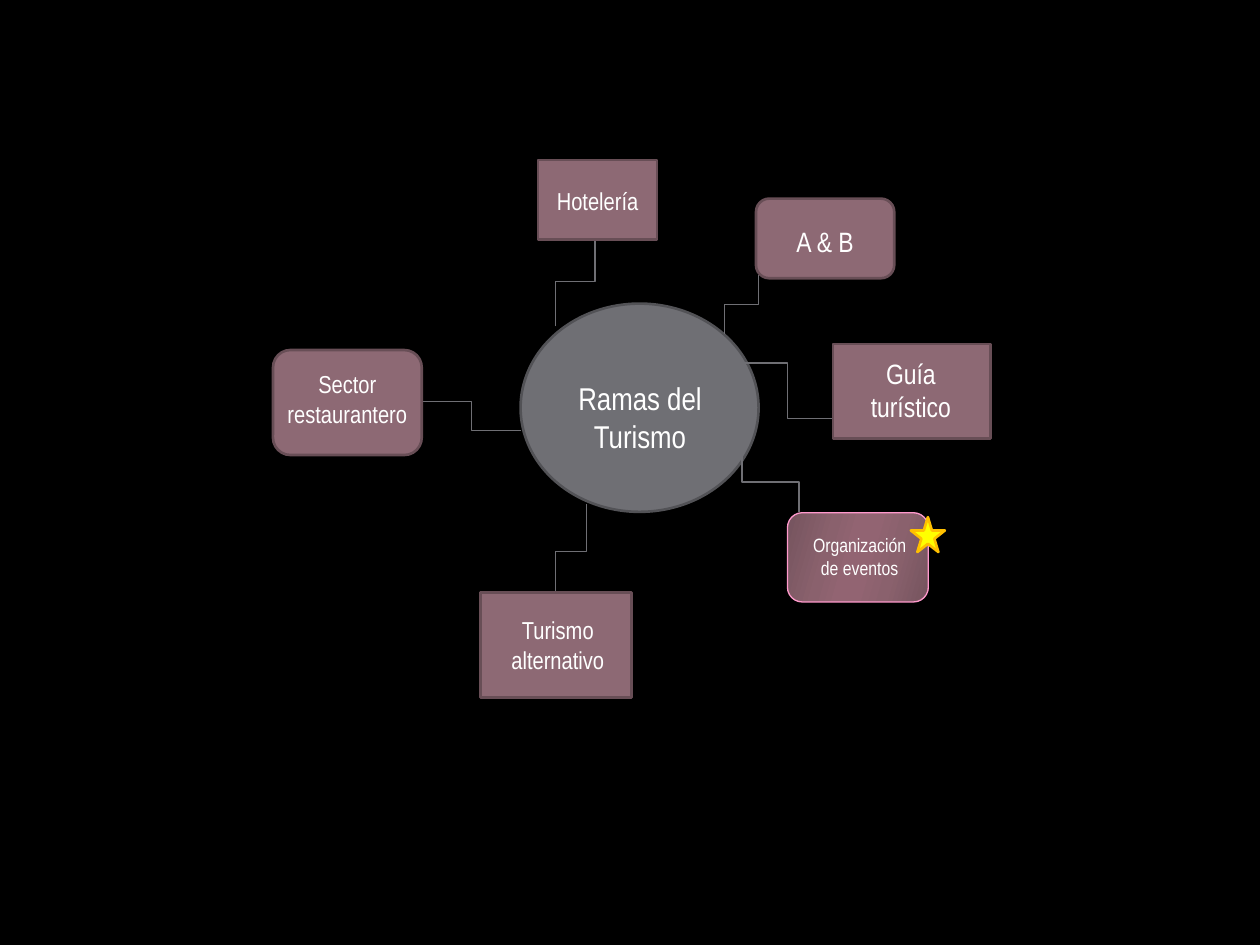
from lxml.etree import SubElement
from pptx import Presentation
from pptx.dml.color import RGBColor
from pptx.enum.shapes import MSO_CONNECTOR, MSO_SHAPE
from pptx.enum.text import MSO_AUTO_SIZE, PP_ALIGN
from pptx.oxml.ns import qn
from pptx.util import Pt

COLORS = {
    "background": "000000", "text": "FFFFFF",
    "hub": "6F6F74", "hub_line": "525256",
    "branch": "8D6974", "branch_line": "684E56",
    "event_line": "FF99CC", "star": "FFFF00", "star_line": "FFC000",
}
EVENT_STOPS = [(0, "75545E"), (30, "8A616D"), (45, "926472"),
               (55, "926472"), (73, "8A616D"), (100, "75545E")]
EVENT_ANGLE = 16


def color(name):
    return RGBColor.from_string(COLORS[name])


class Diagram:
    font = "Arial Narrow"

    def __init__(self, slide):
        self.slide = slide
        slide.background.fill.solid()
        slide.background.fill.fore_color.rgb = color("background")

    def shape(self, kind, box, fill, line, width=1.5):
        shape = self.slide.shapes.add_shape(kind, *map(Pt, box))
        shape.shadow.inherit = False
        shape.fill.solid()
        shape.fill.fore_color.rgb = color(fill)
        shape.line.color.rgb = color(line)
        shape.line.width = Pt(width)
        return shape

    def gradient(self, shape, stops, angle):
        """Fill with any number of stops, given as (percent, hex)."""
        shape.fill.gradient()
        shape.fill.gradient_angle = -angle % 360
        stop_list = shape._element.spPr.find(qn("a:gradFill")).find(qn("a:gsLst"))
        for stop in list(stop_list):
            stop_list.remove(stop)
        for percent, value in stops:
            stop = SubElement(stop_list, qn("a:gs"), pos=str(percent * 1000))
            SubElement(stop, qn("a:srgbClr"), val=value)

    def label(self, text, box, size):
        text_frame = self.slide.shapes.add_textbox(*map(Pt, box)).text_frame
        text_frame.word_wrap = True
        text_frame.auto_size = MSO_AUTO_SIZE.SHAPE_TO_FIT_TEXT
        text_frame.text = text
        paragraph = text_frame.paragraphs[0]
        paragraph.alignment = PP_ALIGN.CENTER
        font = paragraph.runs[0].font
        font.name = self.font
        font.size = Pt(size)
        font.color.rgb = color("text")

    def elbow(self, start, end, vertical):
        """Bent connector; a vertical one leaves its start up or down,
        which takes a quarter turn about the centre."""
        (x1, y1), (x2, y2) = start, end
        dx, dy = x2 - x1, y2 - y1
        turn = -1 if dx * dy > 0 else 1
        if vertical:
            centre_x, centre_y = (x1 + x2) / 2, (y1 + y2) / 2
            half_x, half_y = turn * dy / 2, -turn * dx / 2
            x1, x2 = centre_x - half_x, centre_x + half_x
            y1, y2 = centre_y - half_y, centre_y + half_y
        connector = self.slide.shapes.add_connector(
            MSO_CONNECTOR.ELBOW, Pt(x1), Pt(y1), Pt(x2), Pt(y2))
        connector.line.color.rgb = color("hub")
        connector.line.width = Pt(0.75)
        properties = connector._element.spPr
        SubElement(properties, qn("a:effectLst"))
        if vertical:
            properties.find(qn("a:xfrm")).set("rot", str(turn * 90 % 360 * 60000))


RECTANGLE, ROUNDED = MSO_SHAPE.RECTANGLE, MSO_SHAPE.ROUNDED_RECTANGLE
# text, size, shape kind, shape box, label box, connector start, end, vertical
BRANCHES = [
    ("Hotelería", 14, RECTANGLE, (307.5, 91.5, 68, 45.5), (307.5, 102.5, 68, 24.5),
     (317.5, 186.5), (340, 135.5), True),
    ("A & B", 16, ROUNDED, (432, 113.5, 79, 45.5), (437.5, 124.5, 68, 26.5),
     (414, 191), (433.5, 157), True),
    ("Guía turístico", 16, RECTANGLE, (476, 196.5, 90, 54), (486.5, 200, 68, 46),
     (424, 207.5), (476, 239), False),
    ("Organización de eventos", 11, ROUNDED, (450, 293, 80.5, 51), (454.5, 301, 73.5, 34),
     (424, 258.5), (456.5, 292.5), True),
    ("Turismo alternativo", 14, RECTANGLE, (274.5, 338.5, 86.5, 60), (279.5, 348, 78.5, 41),
     (335, 288), (317.5, 342), True),
    ("Sector restaurantero", 14, ROUNDED, (156, 200, 85, 60), (149.5, 207.5, 98, 41),
     (297.5, 246), (241, 229.5), False),
]


def main():
    presentation = Presentation()
    presentation.slide_width, presentation.slide_height = Pt(720), Pt(540)
    slide = presentation.slides.add_slide(presentation.slide_layouts[6])
    diagram = Diagram(slide)

    diagram.shape(MSO_SHAPE.OVAL, (297.5, 173.5, 136, 119), "hub", "hub_line")
    diagram.label("Ramas del Turismo", (317.5, 213, 96.5, 51), 18)
    for text, size, kind, box, label_box, start, end, vertical in BRANCHES:
        diagram.elbow(start, end, vertical)
        shape = diagram.shape(kind, box, "branch", "branch_line")
        if text.startswith("Organización"):
            diagram.gradient(shape, EVENT_STOPS, EVENT_ANGLE)
            shape.line.color.rgb = color("event_line")
            shape.line.width = Pt(0.75)
        diagram.label(text, label_box, size)
    diagram.shape(MSO_SHAPE.STAR_5_POINT, (520.5, 295.5, 19.5, 20), "star", "star_line")

    presentation.save("out.pptx")


if __name__ == "__main__":
    main()
